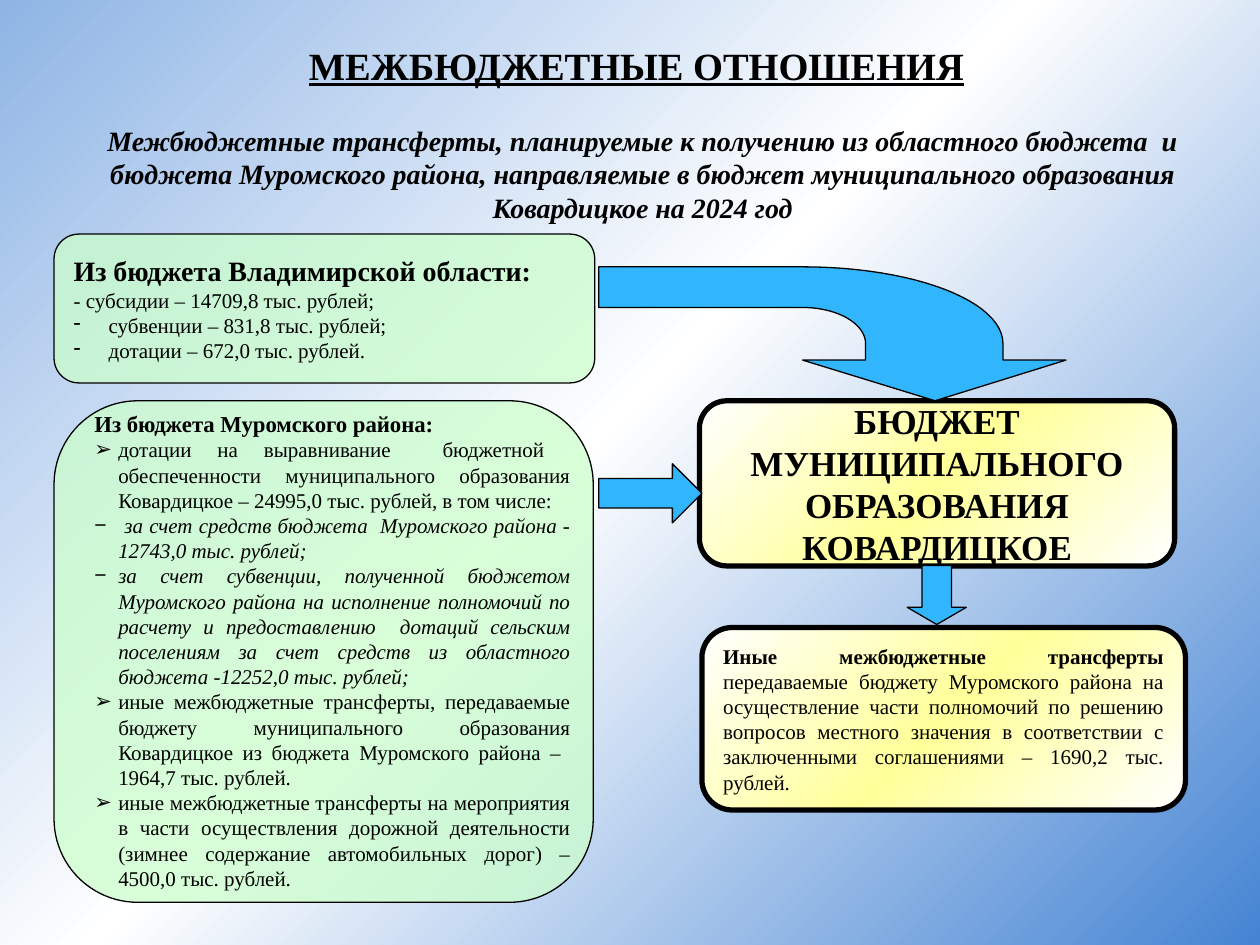
"""Build the slide on inter-budget transfers of a municipality."""
from copy import deepcopy
from dataclasses import dataclass

from lxml import etree
from pptx import Presentation
from pptx.dml.color import RGBColor
from pptx.enum.shapes import MSO_SHAPE
from pptx.enum.text import MSO_ANCHOR, MSO_AUTO_SIZE, PP_ALIGN
from pptx.oxml.ns import qn
from pptx.util import Cm, Pt

CENTER, LEFT, JUSTIFY = PP_ALIGN.CENTER, PP_ALIGN.LEFT, PP_ALIGN.JUSTIFY
TOP, MIDDLE = MSO_ANCHOR.TOP, MSO_ANCHOR.MIDDLE
ROUNDED = MSO_SHAPE.FLOWCHART_ALTERNATE_PROCESS
RIGHT_ARROW, DOWN_ARROW = MSO_SHAPE.RIGHT_ARROW, MSO_SHAPE.DOWN_ARROW
NO_FIT = MSO_AUTO_SIZE.NONE
FONT = "Times New Roman"
COLORS = {
    "black": "000000", "white": "FFFFFF", "yellow": "FFFF99", "green": "CCFFCC",
    "arrow": "31B6FD", "sky": "8FB5E5", "deep": "4584D3",
}
PANEL_STOPS = [(0, "white"), (0.5, "yellow"), (1, "white")]
PAGE_STOPS = [(0, "sky"), (0.47, "white"), (1, "deep")]


@dataclass
class Span:
    text: str
    size: float = 12
    bold: bool = False
    italic: bool = False
    underline: bool = False


@dataclass
class Para:
    spans: list[Span]
    align: PP_ALIGN = LEFT
    bullet: str = ""
    indent: float = 0


@dataclass
class Box:
    left: float
    top: float
    width: float
    height: float

    def lengths(self) -> list[Cm]:
        return [Cm(value) for value in (self.left, self.top, self.width, self.height)]


def color(name: str) -> RGBColor:
    return RGBColor.from_string(COLORS[name])


def item(bullet: str, text: str, italic: bool = False) -> Para:
    return Para([Span(text, italic=italic)], JUSTIFY, bullet, 0.48)


def fill_gradient(fill, stops: list[tuple[float, str]]) -> None:
    fill.gradient()
    fill.gradient_angle = 315
    first = fill.gradient_stops[0]._gs
    first.addnext(deepcopy(first))
    for stop, (position, name) in zip(fill.gradient_stops, stops):
        stop.position = position
        stop.color.rgb = color(name)


def fill_solid(shape, name: str, opacity: int = 100) -> None:
    shape.fill.solid()
    shape.fill.fore_color.rgb = color(name)
    if opacity < 100:
        tint = shape.fill._xPr.find(".//" + qn("a:srgbClr"))
        etree.SubElement(tint, qn("a:alpha"), val=str(opacity * 1000))


def outline(shape, width: float = 0.75) -> None:
    shape.shadow.inherit = False
    shape.line.color.rgb = color("black")
    shape.line.width = Pt(width)


def write(shape, paras: list[Para], anchor: MSO_ANCHOR = TOP, wrap: bool = True) -> None:
    frame = shape.text_frame
    frame_format = {"word_wrap": wrap, "auto_size": NO_FIT, "vertical_anchor": anchor}
    for name, value in frame_format.items():
        setattr(frame, name, value)
    for number, para in enumerate(paras):
        line = frame.paragraphs[0] if number == 0 else frame.add_paragraph()
        line.alignment, line.space_before = para.align, Pt(0)
        props = line._p.get_or_add_pPr()
        props.set("marL", str(Cm(para.indent)))
        props.set("indent", str(-Cm(para.indent)))
        if para.bullet:
            etree.SubElement(props, qn("a:buChar"), char=para.bullet)
        else:
            etree.SubElement(props, qn("a:buNone"))
        for span in para.spans:
            run = line.add_run()
            run.text = span.text
            run.font.color.rgb = color("black")
            font_format = {"name": FONT, "size": Pt(span.size), "bold": span.bold,
                           "italic": span.italic, "underline": span.underline}
            for name, value in font_format.items():
                setattr(run.font, name, value)


def place(shape, box: Box) -> None:
    for name, value in zip(("left", "top", "width", "height"), box.lengths()):
        setattr(shape, name, value)


def add_green_panel(page, box: Box):
    panel = page.shapes.add_shape(ROUNDED, *box.lengths())
    fill_solid(panel, "green", 74)
    outline(panel)
    return panel


def add_yellow_panel(page, box: Box, para: Para) -> None:
    panel = page.shapes.add_shape(ROUNDED, *box.lengths())
    fill_gradient(panel.fill, PANEL_STOPS)
    outline(panel, 3)
    write(panel, [para], MIDDLE)


def add_arrow(page, kind: MSO_SHAPE, box: Box, head: float) -> None:
    arrow = page.shapes.add_shape(kind, *box.lengths())
    arrow.adjustments[1] = head
    fill_solid(arrow, "arrow")
    outline(arrow)


def curve(*controls: tuple[float, float], steps: int = 24) -> list[tuple[float, float]]:
    """Return points along a cubic curve."""
    points = []
    for step in range(steps + 1):
        t = step / steps
        weights = ((1 - t) ** 3, 3 * t * (1 - t) ** 2, 3 * t * t * (1 - t), t ** 3)
        points.append(tuple(sum(w * c[axis] for w, c in zip(weights, controls))
                            for axis in (0, 1)))
    return points


def add_bent_arrow(page) -> None:
    points = [(18.85, 8.08), (21.49, 7.26), (20.22, 7.26)]
    points += curve((20.22, 6.93), (20.22, 6.07), (18.42, 5.38), (16.18, 5.38))
    points += [(12.07, 5.38), (12.07, 6.2)]
    points += curve((16.18, 6.2), (16.89, 6.2), (17.45, 6.53), (17.45, 6.93))
    points += [(17.45, 7.26), (16.18, 7.26)]
    corners = [(Cm(x), Cm(y)) for x, y in points]
    builder = page.shapes.build_freeform(*corners[0], scale=1.0)
    builder.add_line_segments(corners[1:], close=True)
    arrow = builder.convert_to_shape()
    fill_solid(arrow, "arrow")
    outline(arrow)


def main() -> None:
    deck = Presentation()
    deck.slide_width, deck.slide_height = Cm(25.4), Cm(19.05)
    page = deck.slides.add_slide(deck.slide_layouts[1])
    fill_gradient(page.background.fill, PAGE_STOPS)

    title, district_list = page.placeholders
    place(title, Box(1.4, 0.71, 22.86, 1.19))
    write(title, [Para([Span("МЕЖБЮДЖЕТНЫЕ ОТНОШЕНИЯ", 22, True, underline=True)], CENTER)], MIDDLE)

    subtitle = page.shapes.add_textbox(*Box(1.65, 2.36, 22.61, 2.31).lengths())
    write(subtitle, [Para([Span(
        "Межбюджетные трансферты, планируемые к получению из областного бюджета  и бюджета "
        "Муромского района, направляемые в бюджет муниципального образования Ковардицкое "
        "на 2024 год", 16, True, True)], CENTER)])

    add_yellow_panel(page, Box(14.1, 8.08, 9.58, 3.33), Para([Span(
        "БЮДЖЕТ МУНИЦИПАЛЬНОГО ОБРАЗОВАНИЯ КОВАРДИЦКОЕ", 20, True)], CENTER))

    region = add_green_panel(page, Box(1.09, 4.72, 10.9, 3))
    write(region, [
        Para([Span("Из бюджета Владимирской области:", 16, True)]),
        Para([Span("- субсидии – 14709,8 тыс. рублей;")]),
        Para([Span(" субвенции – 831,8 тыс. рублей;")], bullet="-", indent=0.6),
        Para([Span(" дотации – 672,0 тыс. рублей.")], bullet="-", indent=0.6),
    ], MIDDLE, wrap=False)

    add_green_panel(page, Box(1.09, 8.08, 10.87, 10.11))
    add_yellow_panel(page, Box(14.15, 12.65, 9.75, 3.68), Para([
        Span("Иные межбюджетные трансферты ", bold=True),
        Span("передаваемые бюджету Муромского района на осуществление части полномочий по "
             "решению вопросов местного значения в соответствии с заключенными соглашениями "
             "– 1690,2 тыс. рублей.")], JUSTIFY))

    page.shapes._spTree.append(district_list._element)
    place(district_list, Box(1.65, 8.13, 10.11, 10.03))
    write(district_list, [
        Para([Span("Из бюджета Муромского района:", 13, True)]),
        item("➢", "дотации на выравнивание  бюджетной  обеспеченности муниципального "
             "образования Ковардицкое – 24995,0 тыс. рублей, в том числе: "),
        item("−", " за счет средств бюджета  Муромского района - 12743,0 тыс. рублей;", True),
        item("−", "за счет субвенции, полученной бюджетом Муромского района на исполнение "
             "полномочий по расчету и предоставлению  дотаций сельским поселениям за счет "
             "средств из областного бюджета -12252,0 тыс. рублей;", True),
        item("➢", "иные межбюджетные трансферты, передаваемые бюджету муниципального "
             "образования Ковардицкое из бюджета Муромского района –  1964,7 тыс. рублей."),
        item("➢", "иные межбюджетные трансферты на мероприятия в части осуществления дорожной "
             "деятельности (зимнее содержание автомобильных дорог) – 4500,0 тыс. рублей."),
    ])

    add_bent_arrow(page)
    add_arrow(page, DOWN_ARROW, Box(18.29, 11.4, 1.19, 1.19), 0.29)
    add_arrow(page, RIGHT_ARROW, Box(12.07, 9.35, 2.08, 1.19), 0.5)
    deck.save("out.pptx")


if __name__ == "__main__":
    main()
